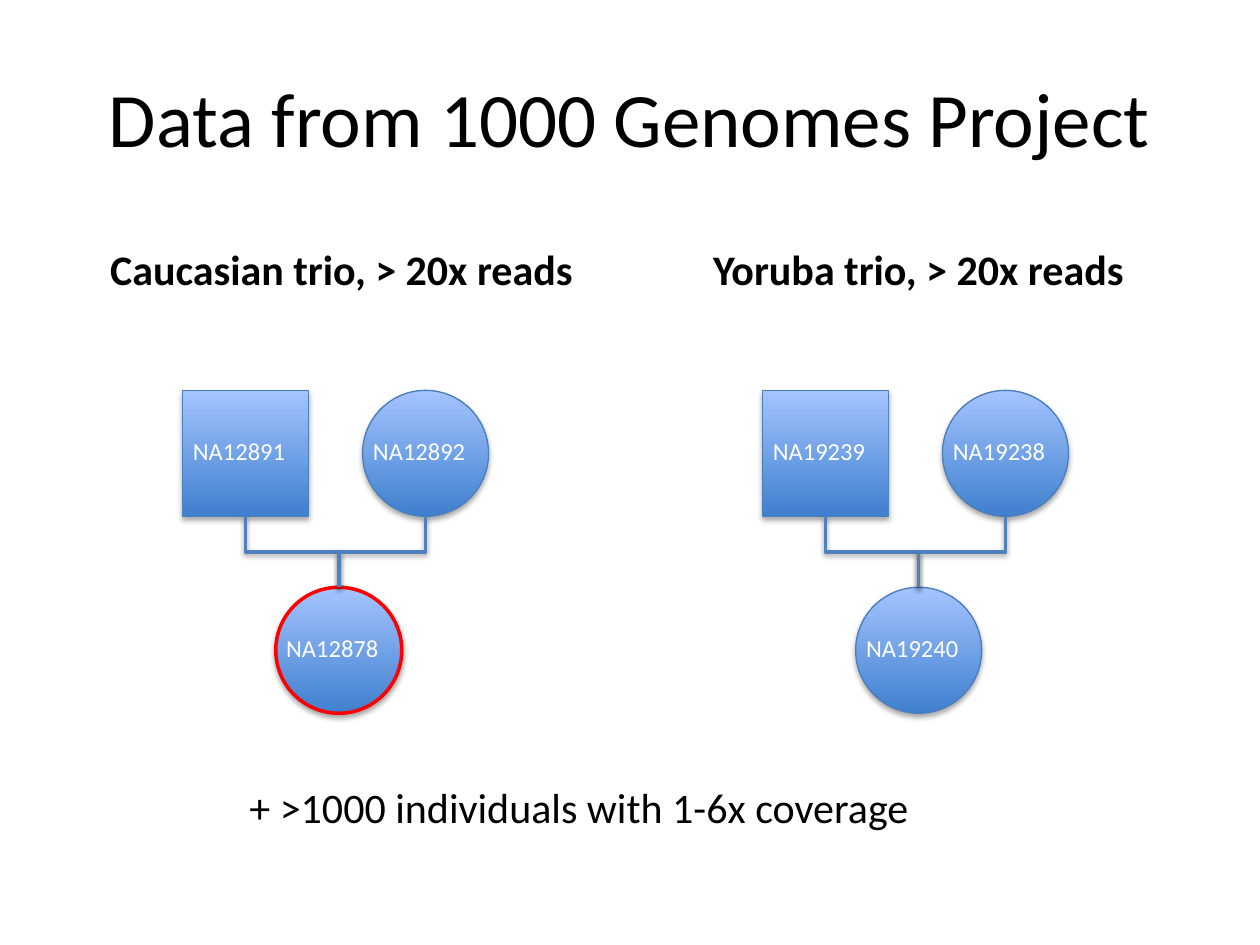
import pptx
import pptx.util
import pptx.dml.color
import pptx.enum.shapes
import pptx.enum.text
import pptx.oxml.ns
import lxml.etree

Cm = pptx.util.Cm
Pt = pptx.util.Pt
SHAPES = pptx.enum.shapes.MSO_SHAPE
ALIGN = pptx.enum.text.PP_ALIGN
ANCHOR = pptx.enum.text.MSO_ANCHOR

TITLE = "Data from 1000 Genomes Project"
FOOTNOTE = "+ >1000 individuals with 1-6x coverage"
TRIOS = [
    {"heading": "Caucasian trio, > 20x reads", "placeholder": 1,
     "heading_left": 1.27, "left": 3.68, "child_line": ("FF0000", 2),
     "members": ("NA12891", "NA12892", "NA12878")},
    {"heading": "Yoruba trio, > 20x reads", "placeholder": 3,
     "heading_left": 12.9, "left": 15.37, "child_line": ("4B7EBC", 0.75),
     "members": ("NA19239", "NA19238", "NA19240")},
]

NODE = 2.54
TREE_TOP = 7.87
FATHER, MOTHER, CHILD = (0, 0), (3.63, 0), (1.88, 3.97)
LABEL_WIDTH, LABEL_HEIGHT = 2.62, 0.86


def color(value):
    return pptx.dml.color.RGBColor.from_string(value)


def place(shape, left, top, width, height):
    shape.left, shape.top = Cm(left), Cm(top)
    shape.width, shape.height = Cm(width), Cm(height)


def write(shape, text, size=14, fill="000000", bold=False,
          align=ALIGN.LEFT, anchor=ANCHOR.TOP, wrap=True):
    frame = shape.text_frame
    frame.word_wrap = wrap
    frame.vertical_anchor = anchor
    paragraph = frame.paragraphs[0]
    paragraph.alignment = align
    run = paragraph.add_run()
    run.text = text
    run.font.name = "Calibri"
    run.font.size = Pt(size)
    run.font.bold = bold
    run.font.color.rgb = color(fill)


def add_label(slide, text, left, top, width, height, **text_format):
    label = slide.shapes.add_textbox(Cm(left), Cm(top), Cm(width), Cm(height))
    write(label, text, wrap=False, **text_format)


def add_shadow(shape, opacity, distance):
    qn = pptx.oxml.ns.qn
    effects = lxml.etree.SubElement(shape._element.spPr, qn("a:effectLst"))
    shadow = lxml.etree.SubElement(
        effects, qn("a:outerShdw"), blurRad=str(Pt(3.15)),
        dist=str(Pt(distance)), dir="5400000", rotWithShape="0")
    black = lxml.etree.SubElement(shadow, qn("a:srgbClr"), val="000000")
    lxml.etree.SubElement(black, qn("a:alpha"), val=str(opacity * 1000))


def set_line(shape, line_color, width):
    shape.line.color.rgb = color(line_color)
    shape.line.width = Pt(width)


def add_member(slide, kind, left, top, line):
    member = slide.shapes.add_shape(kind, Cm(left), Cm(top), Cm(NODE), Cm(NODE))
    member.fill.gradient()
    member.fill.gradient_angle = 90
    for stop, stop_color in zip(member.fill.gradient_stops, ("3F80CE", "A4C4FF")):
        stop.color.rgb = color(stop_color)
    set_line(member, *line)
    add_shadow(member, 35, 1.8)


def add_descent(slide, start, end):
    (x1, y1), (x2, y2) = start, end
    length, spread = y2 - y1, abs(x2 - x1)
    left = (x1 + x2 - length) / 2
    top = (y1 + y2 - spread) / 2
    sides = (left, left + length)
    begin, finish = sides[::-1] if x1 < x2 else sides
    connector = slide.shapes.add_connector(
        pptx.enum.shapes.MSO_CONNECTOR.ELBOW,
        Cm(begin), Cm(top), Cm(finish), Cm(top + spread))
    connector.rotation = 270 if x1 < x2 else 90
    set_line(connector, "4F81BD", 2)
    add_shadow(connector, 38, 1.6)


def add_trio(slide, trio):
    heading = slide.placeholders[trio["placeholder"]]
    place(heading, trio["heading_left"], 4.27, 11.23, 1.78)
    write(heading, trio["heading"], size=24, bold=True,
          align=ALIGN.CENTER, anchor=ANCHOR.BOTTOM)

    father, mother, child = corners = [
        (trio["left"] + x, TREE_TOP + y) for x, y in (FATHER, MOTHER, CHILD)]
    kinds = (SHAPES.RECTANGLE, SHAPES.OVAL, SHAPES.OVAL)
    lines = (("4B7EBC", 0.75), ("4B7EBC", 0.75), trio["child_line"])
    for kind, corner, line in zip(kinds, corners, lines):
        add_member(slide, kind, *corner, line)
    for left, top in (father, mother):
        add_descent(slide, (left + NODE / 2, top + NODE),
                    (child[0] + NODE / 2, child[1]))
    for name, (left, top) in zip(trio["members"], corners):
        add_label(slide, name, left + (NODE - LABEL_WIDTH) / 2, top + 0.8,
                  LABEL_WIDTH, LABEL_HEIGHT, fill="FFFFFF")


def main():
    presentation = pptx.Presentation()
    presentation.slide_width, presentation.slide_height = Cm(25.4), Cm(19.05)
    slide = presentation.slides.add_slide(
        presentation.slide_layouts.get_by_name("Comparison"))
    for index in (2, 4):
        unused = slide.placeholders[index]._element
        unused.getparent().remove(unused)

    title = slide.shapes.title
    place(title, 1.27, 0.76, 22.86, 3.18)
    write(title, TITLE, size=44, align=ALIGN.CENTER, anchor=ANCHOR.MIDDLE)
    for trio in TRIOS:
        add_trio(slide, trio)
    add_label(slide, FOOTNOTE, 4.78, 15.62, 13.97, 1.27, size=24)
    presentation.save("out.pptx")


if __name__ == "__main__":
    main()
